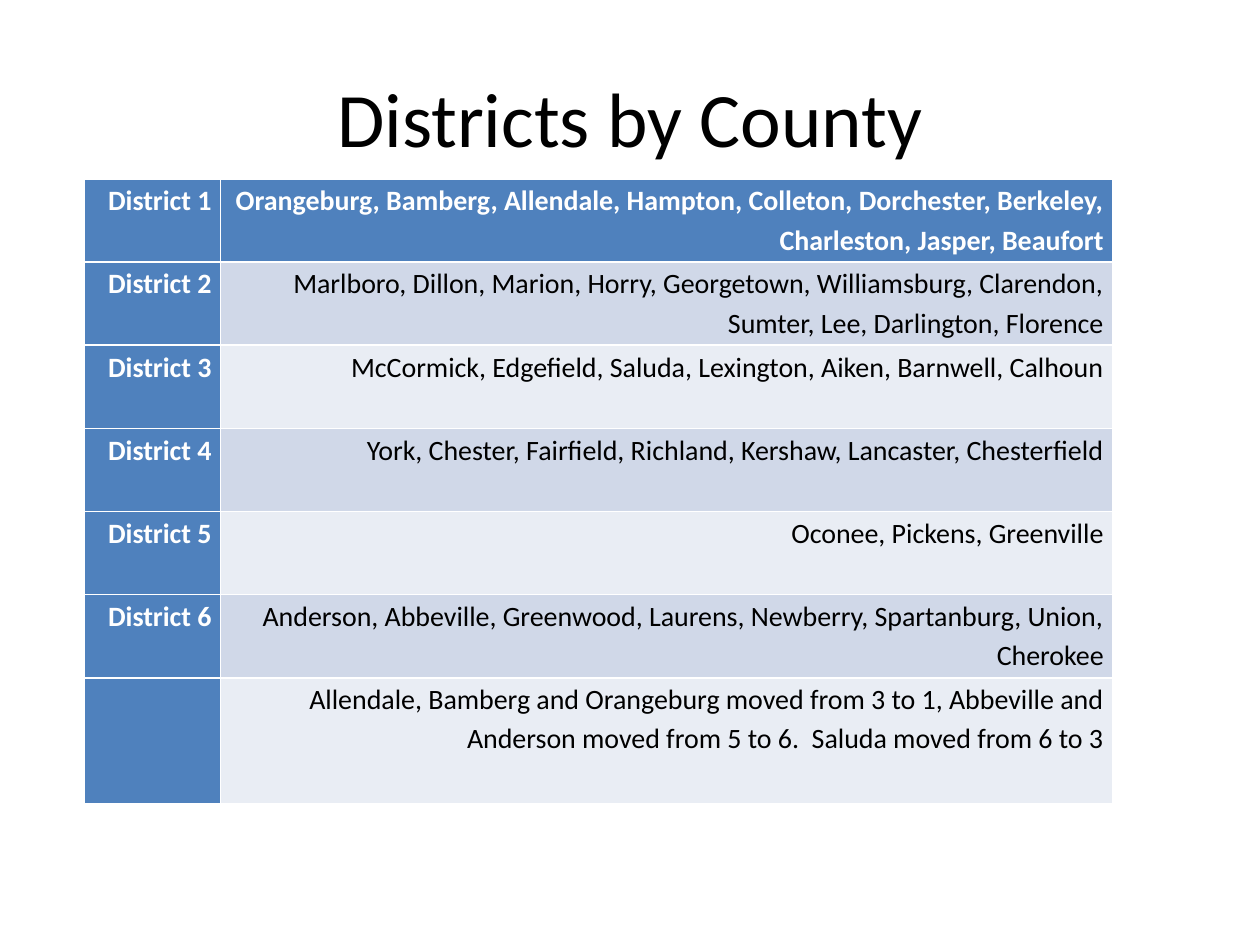
from pptx import Presentation
from pptx.dml.color import RGBColor
from pptx.enum.text import MSO_ANCHOR, PP_ALIGN
from pptx.util import Inches, Pt

CENTER, RIGHT = PP_ALIGN.CENTER, PP_ALIGN.RIGHT
TOP, MIDDLE = MSO_ANCHOR.TOP, MSO_ANCHOR.MIDDLE

BLACK = RGBColor(0x00, 0x00, 0x00)
WHITE = RGBColor(0xFF, 0xFF, 0xFF)
BLUE = RGBColor(0x4F, 0x81, 0xBD)
BANDS = (RGBColor(0xE9, 0xED, 0xF4), RGBColor(0xD0, 0xD8, 0xE8))

TITLE_ONLY = 5
TITLE_FONT = {"name": "Calibri", "size": Pt(44), "bold": False}
CELL_FONT = {"name": "Calibri", "size": Pt(16)}
CELL_FORMAT = {
    "margin_left": Inches(0.07),
    "margin_right": Inches(0.07),
    "margin_top": 0,
    "margin_bottom": 0,
    "vertical_anchor": TOP,
}
CELL_PARAGRAPH = {"alignment": RIGHT, "line_spacing": 1.15}

COLUMN_WIDTHS = (1.08, 7.08)
ROW_HEIGHT = 0.66
NOTE_HEIGHT = 1
DISTRICTS = [
    ("District 1", "Orangeburg, Bamberg, Allendale, Hampton, Colleton, Dorchester, "
                   "Berkeley, Charleston, Jasper, Beaufort"),
    ("District 2", "Marlboro, Dillon, Marion, Horry, Georgetown, Williamsburg, "
                   "Clarendon, Sumter, Lee, Darlington, Florence"),
    ("District 3", "McCormick, Edgefield, Saluda, Lexington, Aiken, Barnwell, Calhoun"),
    ("District 4", "York, Chester, Fairfield, Richland, Kershaw, Lancaster, Chesterfield"),
    ("District 5", "Oconee, Pickens, Greenville"),
    ("District 6", "Anderson, Abbeville, Greenwood, Laurens, Newberry, Spartanburg, "
                   "Union, Cherokee"),
    ("", "Allendale, Bamberg and Orangeburg moved from 3 to 1, Abbeville and "
         "Anderson moved from 5 to 6.  Saluda moved from 6 to 3"),
]


def apply(target, values):
    for name, value in values.items():
        setattr(target, name, value)


def place_title(slide, left, top, width, height):
    title = slide.shapes.title
    apply(title, {"left": Inches(left), "top": Inches(top),
                  "width": Inches(width), "height": Inches(height)})
    title.text_frame.text = "Districts by County"
    title.text_frame.vertical_anchor = MIDDLE
    heading = title.text_frame.paragraphs[0]
    heading.alignment = CENTER
    apply(heading.runs[0].font, TITLE_FONT)
    heading.runs[0].font.color.rgb = BLACK


def fill_cell(cell, text, fill, color, bold):
    cell.text = text
    apply(cell, CELL_FORMAT)
    cell.fill.solid()
    cell.fill.fore_color.rgb = fill
    paragraph = cell.text_frame.paragraphs[0]
    apply(paragraph, CELL_PARAGRAPH)
    apply(paragraph.font, CELL_FONT)
    for run in paragraph.runs:
        apply(run.font, {**CELL_FONT, "bold": bold})
        run.font.color.rgb = color


def place_districts(slide, left, top, width, height):
    table = slide.shapes.add_table(
        len(DISTRICTS), len(COLUMN_WIDTHS),
        Inches(left), Inches(top), Inches(width), Inches(height)).table
    table.first_col = True
    for column, column_width in zip(table.columns, COLUMN_WIDTHS):
        column.width = Inches(column_width)
    for index, (district, counties) in enumerate(DISTRICTS):
        table.rows[index].height = Inches(ROW_HEIGHT if district else NOTE_HEIGHT)
        fill_cell(table.cell(index, 0), district, BLUE, WHITE, True)
        if index == 0:
            fill_cell(table.cell(index, 1), counties, BLUE, WHITE, True)
        else:
            fill_cell(table.cell(index, 1), counties, BANDS[index % 2], BLACK, False)


def main():
    presentation = Presentation()
    presentation.slide_width = Inches(10)
    presentation.slide_height = Inches(7.5)
    slide = presentation.slides.add_slide(presentation.slide_layouts[TITLE_ONLY])
    place_title(slide, 0.5, 0.3, 9, 1.25)
    place_districts(slide, 0.67, 1.42, 8.16, 4.98)
    presentation.save("out.pptx")


if __name__ == "__main__":
    main()
